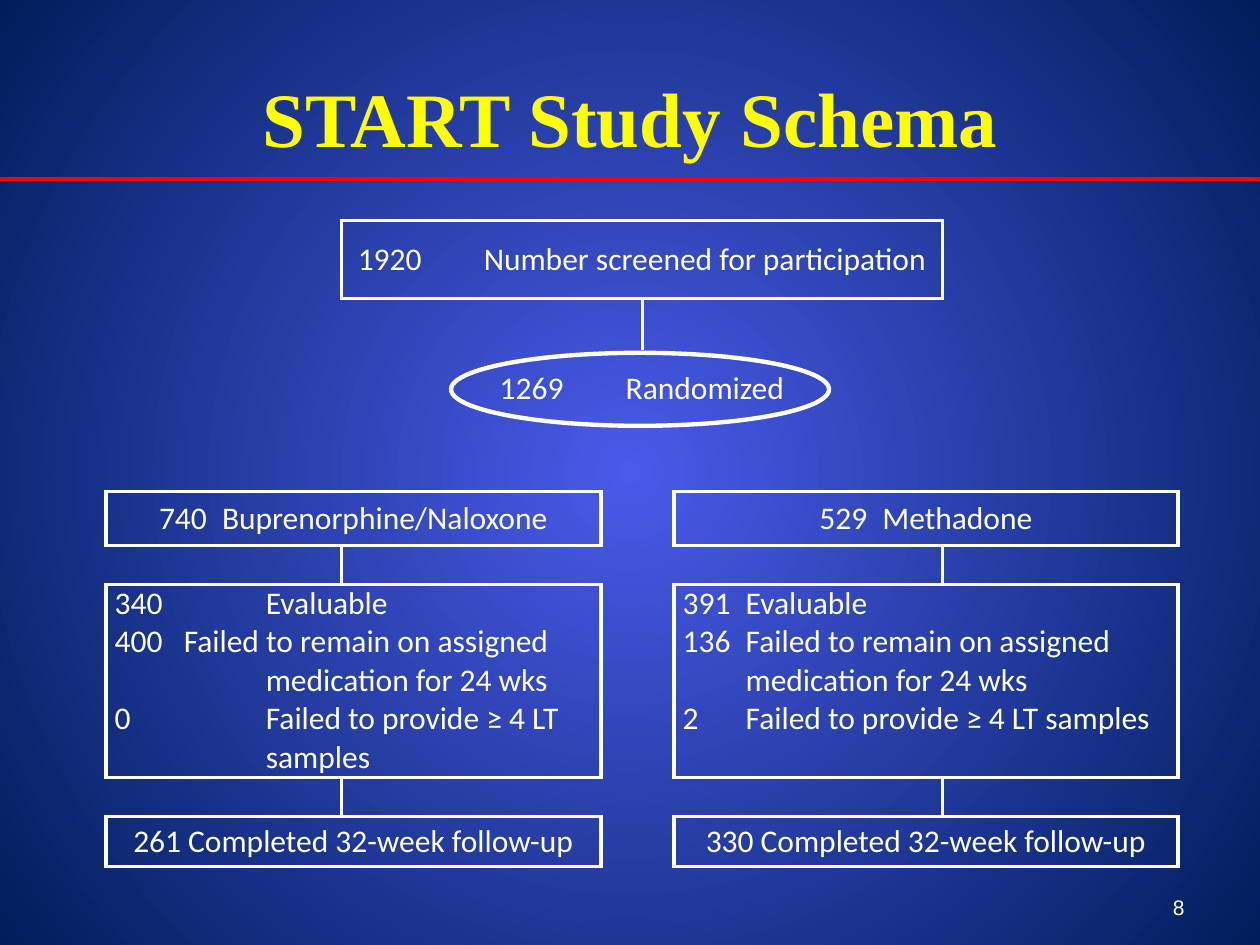
import collections

import lxml.etree
import pptx
import pptx.dml.color
import pptx.enum.shapes
import pptx.enum.text
import pptx.oxml.ns
import pptx.util
from pptx.util import Inches

COLORS = {"center": "4A5AE9", "rim": "001E5B", "title": "FFFF00",
          "white": "FFFFFF", "rule": "FF0000"}
ALIGN = pptx.enum.text.PP_ALIGN
ANCHOR = pptx.enum.text.MSO_ANCHOR
NO_GRID_STYLE = "{2D5ABB26-0587-4C30-8999-92F81FD0307C}"
BORDER_POINTS = 2.25

COLUMNS = [1.87, 1.88, 0.17, 0.33, 0.25, 0.25, 1.88, 1.87]
ROWS = [0.62, 0.41, 0.15, 0.31, 0.15, 0.51, 0.43, 0.31, 1.53, 0.31, 0.4]
LEFT_ARM, RIGHT_ARM = (0, 2), (5, 7)
ARM_ROWS, ARM_STEM_ROWS = (6, 8, 10), (7, 9)

# Row -> merged column ranges
MERGES = {0: [(1, 6)], 1: [(2, 3), (4, 5)], 2: [(2, 5)], 3: [(1, 6)],
          4: [(1, 6)], 5: [(1, 2), (5, 6)]}
MERGES.update({row: [LEFT_ARM, (3, 4), RIGHT_ARM] for row in ARM_ROWS})
MERGES.update({row: [(1, 2), (3, 4), (5, 6)] for row in ARM_STEM_ROWS})

# Boxes as (row, first column, last column); stems as (row, column on their left)
BOXES = [(0, 1, 6)] + [(row, *arm) for row in ARM_ROWS
                       for arm in (LEFT_ARM, RIGHT_ARM)]
STEMS = [(1, 3)] + [(row, column) for row in ARM_STEM_ROWS for column in (0, 6)]

# (row, column, lines, format)
CONTENT = [
    (0, 1, ["1920\tNumber screened for participation"], {}),
    (3, 1, ["1269\tRandomized"], {}),
    (6, 0, ["740\tBuprenorphine/Naloxone"], {}),
    (6, 5, ["529\tMethadone"], {}),
    (8, 0, ["340\tEvaluable",
            "400   Failed to remain on assigned medication for 24 wks",
            "0\tFailed to provide ≥ 4 LT samples"], {"tab": 0.51, "hanging": 1.2}),
    (8, 5, ["391\tEvaluable",
            "136\tFailed to remain on assigned medication for 24 wks",
            "2\tFailed to provide ≥ 4 LT samples"], {"tab": 0.29, "hanging": 0.5}),
    (10, 0, ["261 Completed 32-week follow-up"], {}),
    (10, 5, ["330 Completed 32-week follow-up"], {}),
]


def color(name):
    return pptx.dml.color.RGBColor.from_string(COLORS[name])


def add_xml(parent, tag, **attributes):
    child = lxml.etree.SubElement(parent, pptx.oxml.ns.qn(tag))
    for name, value in attributes.items():
        child.set(name, str(value))
    return child


def write_text(frame, lines, font="Calibri", size=18, fill="white", bold=False,
               align=ALIGN.CENTER, tab=None, hanging=None):
    for index, line in enumerate(lines):
        para = frame.add_paragraph() if index else frame.paragraphs[0]
        para.alignment = ALIGN.LEFT if hanging else align
        span = para.add_run()
        span.text = line
        span.font.name, span.font.size = font, pptx.util.Pt(size)
        span.font.bold, span.font.color.rgb = bold, color(fill)
        properties = para._p.get_or_add_pPr()
        if hanging:
            properties.set("marL", str(Inches(hanging)))
            properties.set("indent", str(-Inches(hanging)))
        if tab:
            stops = add_xml(properties, "a:tabLst")
            add_xml(stops, "a:tab", pos=Inches(tab), algn="l")


def add_text_box(page, left, top, width, height, text, anchor, **text_format):
    box = page.shapes.add_textbox(Inches(left), Inches(top), Inches(width), Inches(height))
    box.text_frame.word_wrap = True
    box.text_frame.vertical_anchor = anchor
    write_text(box.text_frame, [text], **text_format)


def paint_background(page):
    fill = page.background.fill
    fill.gradient()
    for stop, name in zip(fill.gradient_stops, ("center", "rim")):
        stop.color.rgb = color(name)
    gradient = page._element.find(".//" + pptx.oxml.ns.qn("a:gradFill"))
    gradient.remove(gradient.find(pptx.oxml.ns.qn("a:lin")))
    circle = add_xml(gradient, "a:path", path="circle")
    add_xml(circle, "a:fillToRect", l=50000, t=50000, r=50000, b=50000)


def find_edges():
    """Collect the bordered sides of each cell, on both sides of every line."""
    edges = collections.defaultdict(set)

    def upright(row, column):
        edges[row, column].add("R")
        edges[row, column + 1].add("L")

    for row, first, last in BOXES:
        for column in range(first, last + 1):
            edges[row, column].update("TB")
            edges[row - 1, column].add("B")
            edges[row + 1, column].add("T")
        upright(row, first - 1)
        upright(row, last)
    for row, column in STEMS:
        upright(row, column)
    # The first cell of a merged range carries the right side of the range
    for row, ranges in MERGES.items():
        for first, last in ranges:
            edges[row, first] |= edges[row, last] & {"R"}
    return edges


def style_cell(cell, sides):
    cell.margin_left = cell.margin_right = cell.margin_top = cell.margin_bottom = 0
    properties = cell._tc.get_or_add_tcPr()
    for side in "LRTB":
        line = add_xml(properties, "a:ln" + side, w=pptx.util.Pt(BORDER_POINTS))
        if side in sides:
            add_xml(add_xml(line, "a:solidFill"), "a:srgbClr", val=COLORS["white"])
        else:
            add_xml(line, "a:noFill")
    cell.fill.background()


def add_schema_table(page):
    frame = page.shapes.add_table(len(ROWS), len(COLUMNS), Inches(0.84), Inches(1.75),
                                  Inches(sum(COLUMNS)), Inches(sum(ROWS)))
    table = frame.table
    table.first_row = table.horz_banding = False
    table._tbl.tblPr.find(pptx.oxml.ns.qn("a:tableStyleId")).text = NO_GRID_STYLE
    for column, width in zip(table.columns, COLUMNS):
        column.width = Inches(width)
    for row, height in zip(table.rows, ROWS):
        row.height = Inches(height)

    edges = find_edges()
    filled = {(row, column) for row, column, _, _ in CONTENT}
    for row in range(len(ROWS)):
        for column in range(len(COLUMNS)):
            cell = table.cell(row, column)
            style_cell(cell, edges[row, column])
            if (row, column) not in filled:  # keeps the thin rows thin
                add_xml(cell.text_frame.paragraphs[0]._p, "a:endParaRPr", sz=100)
    for row, ranges in MERGES.items():
        for first, last in ranges:
            table.cell(row, first).merge(table.cell(row, last))
    for row, column, lines, text_format in CONTENT:
        cell = table.cell(row, column)
        cell.margin_left = cell.margin_right = Inches(0.07)
        cell.vertical_anchor = ANCHOR.TOP if "hanging" in text_format else ANCHOR.MIDDLE
        write_text(cell.text_frame, lines, **text_format)


def add_ring(page, left, top, width, height):
    ring = page.shapes.add_shape(pptx.enum.shapes.MSO_SHAPE.OVAL, Inches(left), Inches(top),
                                 Inches(width), Inches(height))
    ring.shadow.inherit = False
    ring.fill.background()
    ring.line.color.rgb, ring.line.width = color("white"), pptx.util.Pt(2.5)


def add_rule(page, top, width):
    rule = page.shapes.add_connector(pptx.enum.shapes.MSO_CONNECTOR.STRAIGHT,
                                     0, Inches(top), Inches(width), Inches(top))
    rule.line.color.rgb, rule.line.width = color("rule"), pptx.util.Pt(2.25)
    add_xml(rule._element.spPr, "a:effectLst")


def main():
    deck = pptx.Presentation()
    deck.slide_width, deck.slide_height = Inches(10), Inches(7.5)
    page = deck.slides.add_slide(deck.slide_layouts[6])
    paint_background(page)

    # Title and page number
    add_text_box(page, 0.5, 0.3, 9, 1.25, "START Study Schema", ANCHOR.MIDDLE,
                 font="Times New Roman", size=44, fill="title", bold=True)
    add_text_box(page, 7.17, 6.83, 2.33, 0.52, "8", ANCHOR.BOTTOM,
                 font="Arial", size=12, align=ALIGN.RIGHT)

    # Flow chart, with a ring round the randomized count
    add_schema_table(page)
    add_ring(page, 3.58, 2.8, 3, 0.58)

    # Rule under the title
    add_rule(page, 1.42, 10)
    deck.save("out.pptx")


if __name__ == "__main__":
    main()
